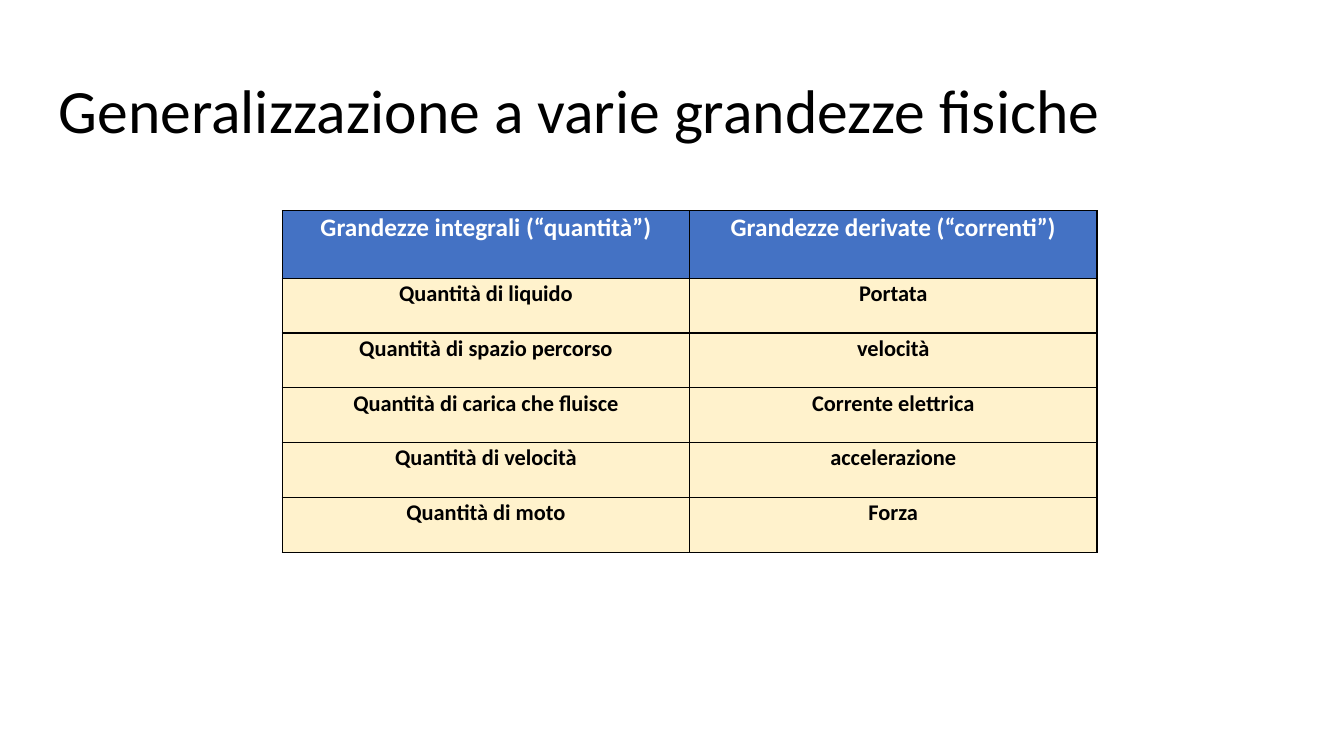
from lxml import etree
from pptx import Presentation
from pptx import util as u
from pptx.dml.color import RGBColor
from pptx.enum import text
from pptx.oxml import ns

BLACK = RGBColor(0x00, 0x00, 0x00)
WHITE = RGBColor(0xFF, 0xFF, 0xFF)
BLUE = RGBColor(0x44, 0x72, 0xC4)
CREAM = RGBColor(0xFF, 0xF2, 0xCC)

SLIDE_W, SLIDE_H = u.Inches(13.33), u.Inches(7.5)
COLUMN_W = u.Inches(4.04)
HEADER_H, QUANTITY_H = u.Inches(0.67), u.Inches(0.544)

TITLE_FONT = {"name": "Calibri", "size": u.Pt(44), "bold": False}
HEADER_FONT = {"name": "Calibri", "size": u.Pt(18), "bold": True}
QUANTITY_FONT = {"name": "Calibri", "size": u.Pt(16), "bold": True}
CELL_FORMAT = {
    "margin_left": u.Inches(0.07),
    "margin_right": u.Inches(0.07),
    "margin_top": 0,
    "margin_bottom": 0,
    "vertical_anchor": text.MSO_ANCHOR.TOP,
}

QUANTITIES = [
    ("Grandezze integrali (“quantità”)", "Grandezze derivate (“correnti”)"),
    ("Quantità di liquido", "Portata"),
    ("Quantità di spazio percorso", "velocità"),
    ("Quantità di carica che fluisce", "Corrente elettrica"),
    ("Quantità di velocità", "accelerazione"),
    ("Quantità di moto", "Forza"),
]


def apply_format(target, values):
    for attribute, value in values.items():
        setattr(target, attribute, value)


def write_centred(frame, wording, font, color, spacing):
    line = frame.paragraphs[0]
    line.text = wording
    line.alignment = text.PP_ALIGN.CENTER
    line.line_spacing = spacing
    apply_format(line.runs[0].font, font)
    line.runs[0].font.color.rgb = color


def add_title(slide, wording):
    title = slide.shapes.add_textbox(
        0, u.Inches(0.4), u.Inches(11.5), u.Inches(1.45))
    title.text_frame.word_wrap = True
    title.text_frame.vertical_anchor = text.MSO_ANCHOR.MIDDLE
    write_centred(title.text_frame, wording, TITLE_FONT, BLACK, 0.9)


def add_borders(cell, color, width):
    properties = cell._tc.get_or_add_tcPr()
    # Borders come before the fill in the cell properties
    for position, side in enumerate(("lnL", "lnR", "lnT", "lnB")):
        border = etree.Element(ns.qn(f"a:{side}"), w=str(width))
        fill = etree.SubElement(border, ns.qn("a:solidFill"))
        etree.SubElement(fill, ns.qn("a:srgbClr"), val=str(color))
        properties.insert(position, border)


def add_quantity_table(slide, quantities):
    heights = [HEADER_H] + [QUANTITY_H] * (len(quantities) - 1)
    table = slide.shapes.add_table(
        len(quantities), 2, u.Inches(2.8), u.Inches(2.09),
        2 * COLUMN_W, sum(heights)).table
    for column in table.columns:
        column.width = COLUMN_W
    for r, (pair, height) in enumerate(zip(quantities, heights)):
        table.rows[r].height = height
        font, color, fill = ((QUANTITY_FONT, BLACK, CREAM) if r
                             else (HEADER_FONT, WHITE, BLUE))
        for c, wording in enumerate(pair):
            cell = table.cell(r, c)
            apply_format(cell, CELL_FORMAT)
            cell.fill.solid()
            cell.fill.fore_color.rgb = fill
            add_borders(cell, BLACK, u.Pt(1))
            write_centred(cell.text_frame, wording, font, color, 1.07)


def main():
    deck = Presentation()
    deck.slide_width, deck.slide_height = SLIDE_W, SLIDE_H
    slide = deck.slides.add_slide(deck.slide_layouts[6])

    # Heading
    add_title(slide, "Generalizzazione a varie grandezze fisiche")

    # Integral quantities beside their derived currents
    add_quantity_table(slide, QUANTITIES)

    deck.save("out.pptx")


if __name__ == "__main__":
    main()
